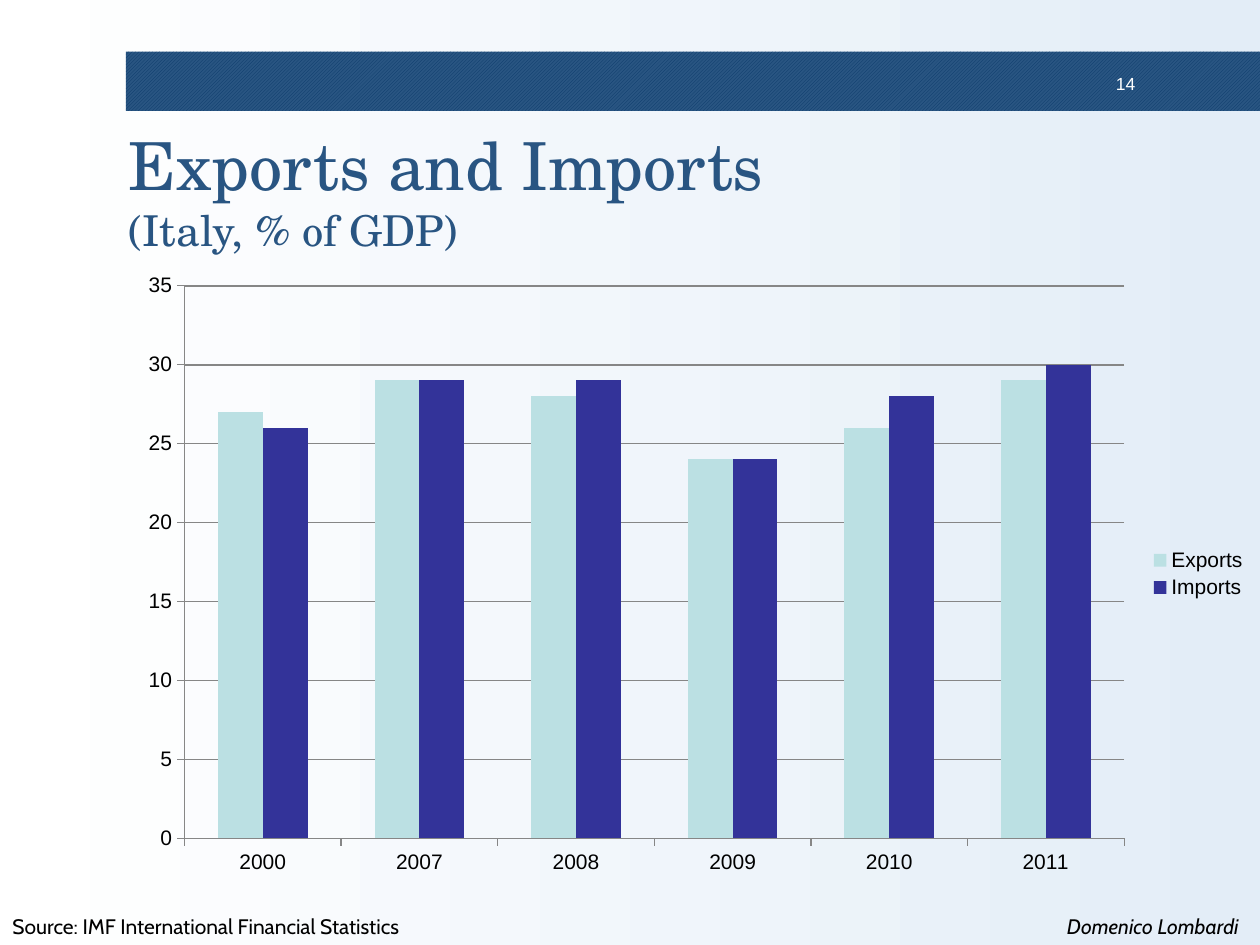
import pptx
import pptx.util
from pptx.chart.data import CategoryChartData
from pptx.dml.color import RGBColor
from pptx.enum.chart import XL_CHART_TYPE, XL_LEGEND_POSITION, XL_TICK_MARK
from pptx.enum.dml import MSO_PATTERN
from pptx.enum.shapes import MSO_SHAPE
from pptx.enum.text import MSO_ANCHOR, MSO_AUTO_SIZE, PP_ALIGN
from pptx.util import Inches, Pt

NAVY, BLACK, GREY = "295582", "000000", "868686"
TITLE = [("Exports and Imports", 37.8), ("(Italy, % of GDP)", 24.3)]
YEARS = ["2000", "2007", "2008", "2009", "2010", "2011"]
SERIES = [
    ("Exports", [27, 29, 28, 24, 26, 29], "BBE0E3"),
    ("Imports", [26, 29, 29, 24, 28, 30], "333399"),
]
# text, box, margins (x, y), alignment, size, font, colour, italic
LABELS = [
    ("14", (8.67, 0.54, 0.41, 0.23), (0.07, 0.04), PP_ALIGN.RIGHT,
     10, "Arial", "FFFFFF", False),
    ("Source: IMF International Financial Statistics", (0, 7.2, 3.53, 0.3),
     (0.1, 0.05), PP_ALIGN.LEFT, 12, "Cabin", BLACK, False),
    ("Domenico Lombardi", (8.3, 7.2, 1.7, 0.3), (0.1, 0.05),
     PP_ALIGN.CENTER, 12, "Cabin", BLACK, True),
]


def rgb(value):
    return RGBColor.from_string(value)


def style(font, size, name, color, italic=False):
    font.size, font.name, font.italic = Pt(size), name, italic
    font.color.rgb = rgb(color)


def place(sp, box):
    sp.left, sp.top, sp.width, sp.height = map(Inches, box)


def set_margins(tf, x, y):
    tf.margin_left = tf.margin_right = Inches(x)
    tf.margin_top = tf.margin_bottom = Inches(y)


def add_background(s):
    fill = s.background.fill
    fill.gradient()
    fill.gradient_angle = 0
    for stop, position, color in zip(fill.gradient_stops, (0, 1), ("FFFFFF", "E3EDF7")):
        stop.position = position
        stop.color.rgb = rgb(color)


def add_band(s):
    sp = s.shapes.add_shape(MSO_SHAPE.RECTANGLE, *map(Inches, (1, 0.41, 9, 0.47)))
    sp.shadow.inherit = False
    sp.line.fill.background()
    sp.fill.patterned()
    sp.fill.pattern = MSO_PATTERN.LIGHT_UPWARD_DIAGONAL
    sp.fill.fore_color.rgb = rgb("083868")
    sp.fill.back_color.rgb = rgb(NAVY)


def add_title(s):
    sp = s.shapes.title
    place(sp, (0.98, 0.94, 8.05, 1.13))
    tf = sp.text_frame
    tf.auto_size = MSO_AUTO_SIZE.NONE
    tf.vertical_anchor = MSO_ANCHOR.MIDDLE
    set_margins(tf, 0.04, 0.04)
    p = tf.paragraphs[0]
    p.alignment = PP_ALIGN.LEFT
    for i, (text, size) in enumerate(TITLE):
        if i:
            p.add_line_break()
        r = p.add_run()
        r.text = text
        style(r.font, size, "TeX Gyre Schola", NAVY)


def add_chart(s):
    data = CategoryChartData()
    data.categories = YEARS
    for name, values, _ in SERIES:
        data.add_series(name, values)
    chart = s.shapes.add_chart(XL_CHART_TYPE.COLUMN_CLUSTERED,
                               *map(Inches, (1, 2.08, 9, 4.95)), data).chart
    style(chart.font, 16, "Arial", BLACK)
    chart.has_title = False
    chart.has_legend = True
    chart.legend.position = XL_LEGEND_POSITION.RIGHT
    chart.legend.include_in_layout = False
    style(chart.legend.font, 12, "Arial", BLACK)

    for axis in (chart.category_axis, chart.value_axis):
        axis.major_tick_mark = XL_TICK_MARK.OUTSIDE
        axis.minor_tick_mark = XL_TICK_MARK.NONE
        style(axis.tick_labels.font, 12, "Arial", BLACK)
        axis.format.line.color.rgb = rgb(GREY)
        axis.format.line.width = Pt(0.75)
    value_axis = chart.value_axis
    value_axis.minimum_scale, value_axis.maximum_scale = 0, 35
    value_axis.major_unit = 5
    value_axis.has_major_gridlines = True
    value_axis.major_gridlines.format.line.color.rgb = rgb(GREY)
    value_axis.major_gridlines.format.line.width = Pt(1)

    plot = chart.plots[0]
    plot.gap_width, plot.overlap = 150, 0
    plot.vary_by_categories = False
    for series, (_, _, color) in zip(plot.series, SERIES):
        series.format.fill.solid()
        series.format.fill.fore_color.rgb = rgb(color)


def add_label(s, text, box, margins, alignment, *font):
    tf = s.shapes.add_textbox(*map(Inches, box)).text_frame
    tf.word_wrap = False
    set_margins(tf, *margins)
    p = tf.paragraphs[0]
    p.alignment = alignment
    r = p.add_run()
    r.text = text
    style(r.font, *font)


def main():
    prs = pptx.Presentation()
    prs.slide_width, prs.slide_height = Inches(10), Inches(7.5)
    s = prs.slides.add_slide(prs.slide_layouts[5])
    add_background(s)
    add_band(s)
    add_title(s)
    add_chart(s)
    for label in LABELS:
        add_label(s, *label)
    prs.save("out.pptx")


if __name__ == "__main__":
    main()
